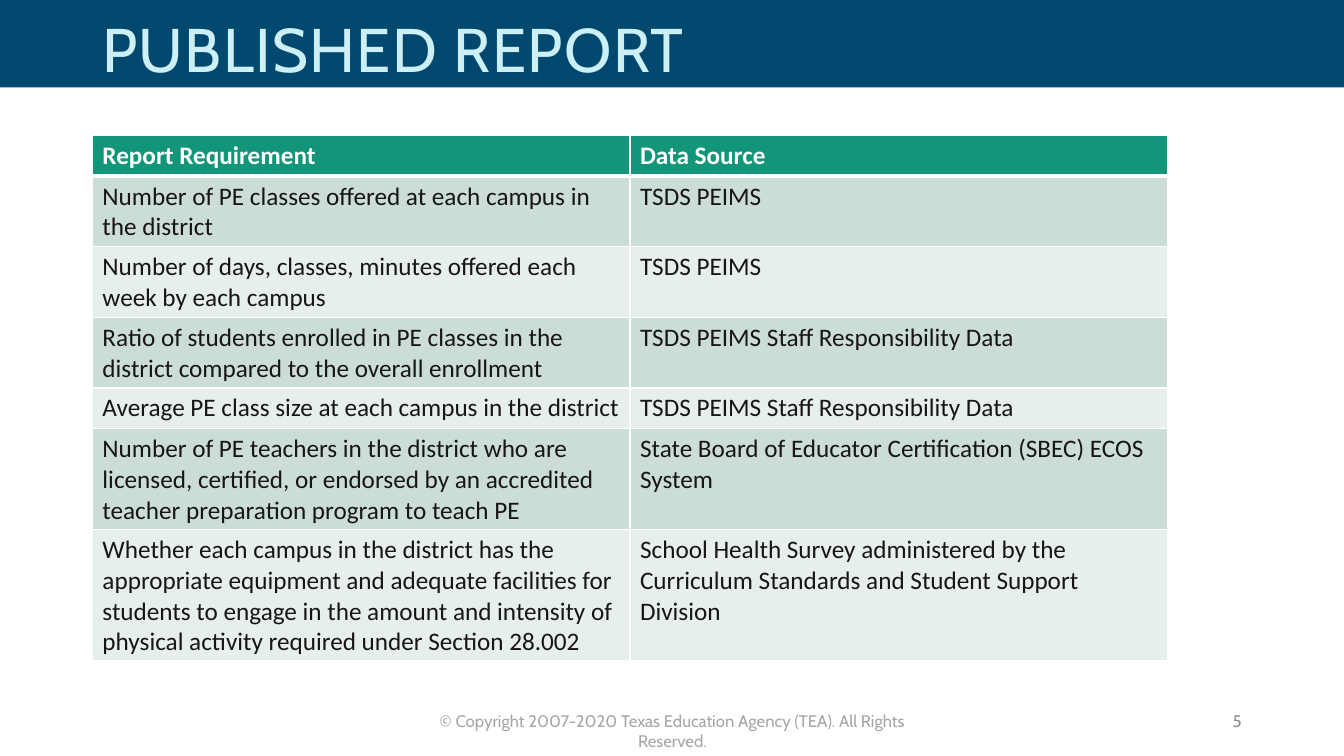
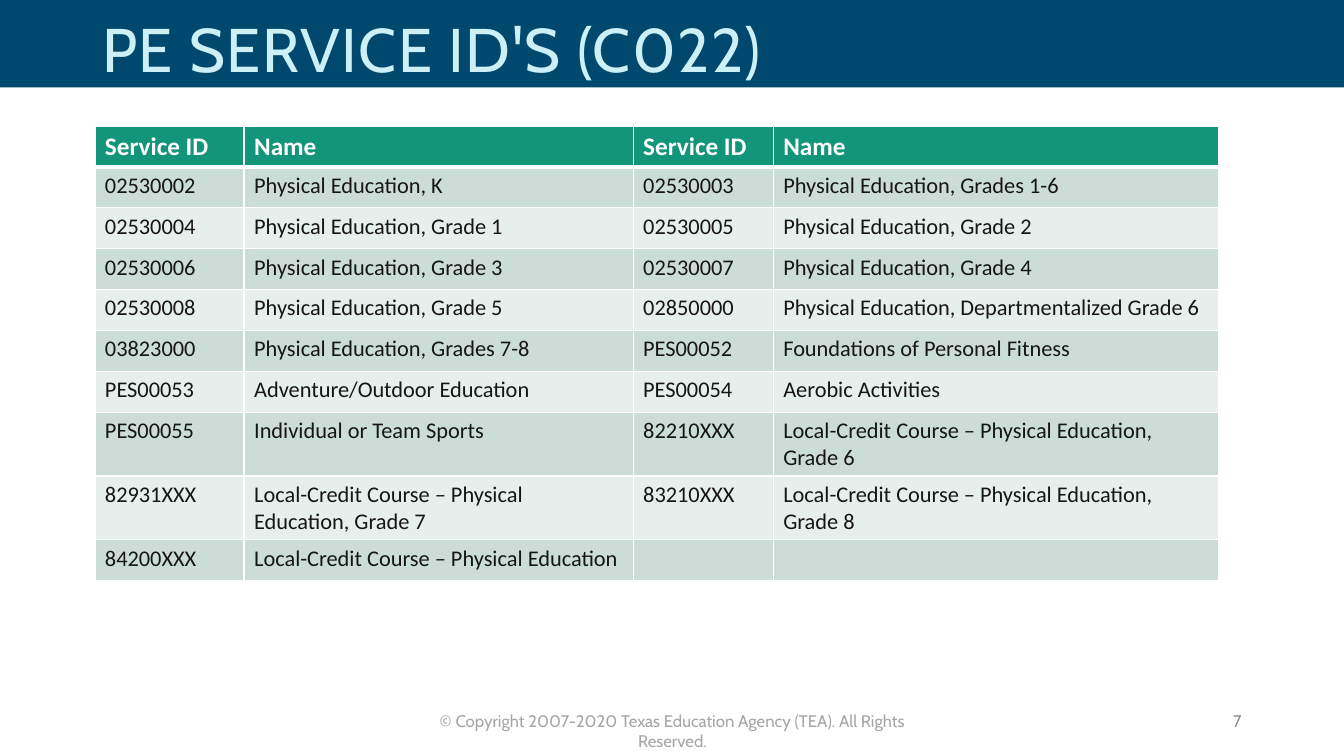
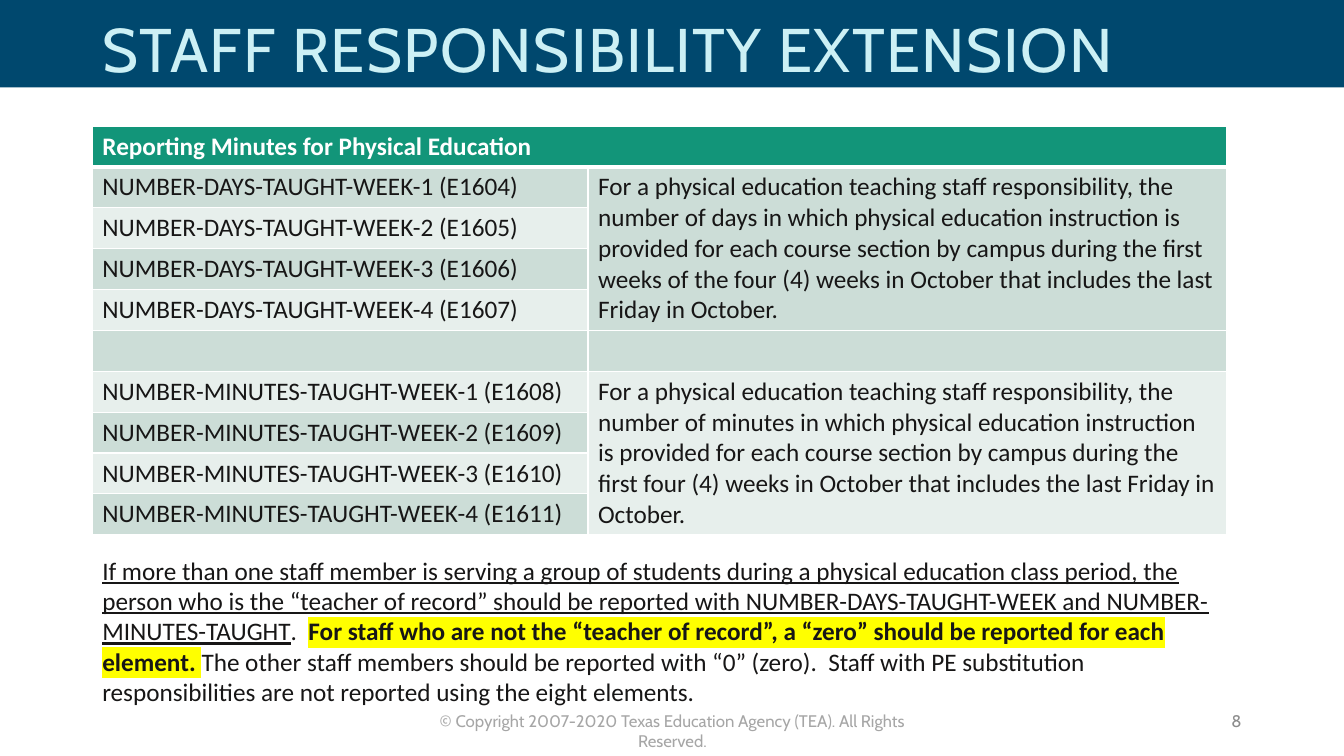
from lxml.etree import SubElement
from pptx import Presentation
from pptx.dml.color import RGBColor as Color
from pptx.enum.shapes import MSO_SHAPE as Shape
from pptx.enum.text import MSO_ANCHOR as Anchor, PP_ALIGN as Align
from pptx.oxml import parse_xml
from pptx.oxml.ns import nsdecls, qn
from pptx.util import Inches, Pt

COLORS = {
    "band": "00486E", "title": "CCF0F5", "header": "129579", "white": "FFFFFF",
    "dark stripe": "CCDDD7", "light stripe": "E7EFEC", "ink": "171616",
    "footer": "A6A6A6", "number": "8C8C8C", "marker": "FFFF00",
}
FORMATS = {
    "title": {"name": "Cabin", "size": Pt(44), "color": "title"},
    "footer": {"name": "Cabin", "size": Pt(12), "color": "footer"},
    "number": {"name": "Cabin", "size": Pt(12), "color": "number"},
    "header": {"name": "Calibri", "size": Pt(18), "color": "white", "bold": True},
    "body": {"name": "Calibri", "size": Pt(18), "color": "ink"},
    "small": {"name": "Calibri", "size": Pt(16), "color": "ink"},
}
# The slide is a grid of 160 columns by 90 rows
COLUMNS, ROWS = 160, 90
LEFT = 11
TABLE_ROW = 4.87
FOOTER = "© Copyright 2007-2020 Texas Education Agency (TEA). All Rights Reserved."


class Report:
    def __init__(self):
        self.deck = Presentation()
        self.deck.slide_width, self.deck.slide_height = Inches(13.33), Inches(7.5)
        self.page = None

    def x(self, columns):
        return int(self.deck.slide_width * columns / COLUMNS)

    def y(self, rows):
        return int(self.deck.slide_height * rows / ROWS)

    def place(self, left, top, width, height):
        return self.x(left), self.y(top), self.x(width), self.y(height)

    def start_page(self, title, number):
        """Add a slide with the shared band, title, footer and number."""
        self.page = self.deck.slides.add_slide(self.deck.slide_layouts[6])
        band = self.page.shapes.add_shape(Shape.RECTANGLE, *self.place(0, 0, COLUMNS, 10.4))
        band.shadow.inherit = False
        band.fill.solid()
        band.fill.fore_color.rgb = Color.from_string(COLORS["band"])
        band.line.fill.background()
        self.text((48.6, 84, 62.9, 3.6), [(FOOTER, {})], "footer", align=Align.CENTER)
        heading = self.text((LEFT, 1.1, 128, 10.4), [(title, {})], "title", anchor=Anchor.MIDDLE)
        heading.line_spacing = 0.9
        heading.runs[0].font._element.set("spc", "100")
        self.text((113, 83.4, 36, 4.8), [(str(number), {})], "number", Align.RIGHT, Anchor.MIDDLE)

    def add_spans(self, para, spans, style):
        """Add (text, extra format) spans to a paragraph."""
        for words, extra in spans:
            span = para.add_run()
            span.text = words
            values = {**FORMATS[style], **extra}
            span.font.color.rgb = Color.from_string(COLORS[values.pop("color")])
            marker = values.pop("marker", None)
            for key, value in values.items():
                setattr(span.font, key, value)
            if marker:
                fill = span.font._element.find(qn("a:solidFill"))
                fill.addnext(parse_xml(
                    f'<a:highlight {nsdecls("a")}><a:srgbClr val="{COLORS[marker]}"/></a:highlight>'))

    def text(self, area, spans, style, align=Align.LEFT, anchor=Anchor.TOP):
        frame = self.page.shapes.add_textbox(*self.place(*area)).text_frame
        frame.word_wrap = True
        frame.vertical_anchor = anchor
        para = frame.paragraphs[0]
        para.alignment = align
        self.add_spans(para, spans, style)
        return para

    def borders(self, cell, row):
        """White cell lines, heavier between the header and the body."""
        widths = {"L": 1, "R": 1, "T": 3 if row == 1 else 1, "B": 3 if row == 0 else 1}
        properties = cell._tc.get_or_add_tcPr()
        for index, (side, width) in enumerate(widths.items()):
            line = properties.makeelement(qn(f"a:ln{side}"), {"w": str(int(Pt(width)))})
            fill = SubElement(line, qn("a:solidFill"))
            SubElement(fill, qn("a:srgbClr"), val=COLORS["white"])
            properties.insert(index, line)

    def table(self, left, top, widths, rows, style="body", merges=()):
        area = self.place(left, top, sum(widths), TABLE_ROW * len(rows))
        table = self.page.shapes.add_table(len(rows), len(widths), *area).table
        for column, width in zip(table.columns, widths):
            column.width = self.x(width)
        for row, texts in enumerate(rows):
            table.rows[row].height = self.y(TABLE_ROW)
            stripe = "header" if row == 0 else ("light stripe", "dark stripe")[row % 2]
            for column, words in enumerate(texts):
                cell = table.cell(row, column)
                cell.fill.solid()
                cell.fill.fore_color.rgb = Color.from_string(COLORS[stripe])
                self.borders(cell, row)
                if words:
                    self.add_spans(cell.text_frame.paragraphs[0], [(words, {})],
                                   "header" if row == 0 else style)
        for first, last in merges:
            table.cell(*first).merge(table.cell(*last))


def main():
    report = Report()

    # Report requirements and their sources
    report.start_page("PUBLISHED REPORT", 5)
    report.table(LEFT, 16.1, [64, 64], [
        ("Report Requirement", "Data Source"),
        ("Number of PE classes offered at each campus in the district", "TSDS PEIMS"),
        ("Number of days, classes, minutes offered each week by each campus", "TSDS PEIMS"),
        ("Ratio of students enrolled in PE classes in the district compared to the overall "
         "enrollment", "TSDS PEIMS Staff Responsibility Data"),
        ("Average PE class size at each campus in the district",
         "TSDS PEIMS Staff Responsibility Data"),
        ("Number of PE teachers in the district who are licensed, certified, or endorsed by an "
         "accredited teacher preparation program to teach PE",
         "State Board of Educator Certification (SBEC) ECOS System"),
        ("Whether each campus in the district has the appropriate equipment and adequate "
         "facilities for students to engage in the amount and intensity of physical activity "
         "required under Section 28.002",
         "School Health Survey administered by the Curriculum Standards and Student Support "
         "Division"),
    ])

    # Service codes, two to a row
    course = "Physical Education"
    local = f"Local-Credit Course – {course}"
    report.start_page("PE SERVICE ID'S (C022)", 7)
    report.table(11.3, 15, [17.76, 46.32, 16.68, 53.04], [
        ("Service ID", "Name") * 2,
        ("02530002", f"{course}, K", "02530003", f"{course}, Grades 1-6"),
        ("02530004", f"{course}, Grade 1", "02530005", f"{course}, Grade 2"),
        ("02530006", f"{course}, Grade 3", "02530007", f"{course}, Grade 4"),
        ("02530008", f"{course}, Grade 5", "02850000", f"{course}, Departmentalized Grade 6"),
        ("03823000", f"{course}, Grades 7-8", "PES00052", "Foundations of Personal Fitness"),
        ("PES00053", "Adventure/Outdoor Education", "PES00054", "Aerobic Activities"),
        ("PES00055", "Individual or Team Sports", "82210XXX", f"{local}, Grade 6"),
        ("82931XXX", f"{local}, Grade 7", "83210XXX", f"{local}, Grade 8"),
        ("84200XXX", local, "", ""),
    ], style="small")

    # Weekly elements, each group with one merged explanation
    def weeks(unit, first_code, explanation):
        return [(f"NUMBER-{unit}-TAUGHT-WEEK-{week + 1} (E{first_code + week})",
                 "" if week else explanation) for week in range(4)]

    duty = "For a physical education teaching staff responsibility, the number of"
    given = "in which physical education instruction is provided for each course section by campus"
    october = "(4) weeks in October that includes the last Friday in October."
    report.start_page("STAFF RESPONSIBILITY EXTENSION", 8)
    report.table(LEFT, 15, [59, 76], [
        ("Reporting Minutes for Physical Education", ""),
        *weeks("DAYS", 1604, f"{duty} days {given} during the first weeks of the four {october}"),
        ("", ""),
        *weeks("MINUTES", 1608, f"{duty} minutes {given} during the first four {october}"),
    ], merges=[((0, 0), (0, 1)), ((1, 1), (4, 1)), ((6, 1), (9, 1))])
    report.text((LEFT, 65.5, 135, 19.4), [
        ("If more than one staff member is serving a group of students during a physical "
         "education class period, the person who is the “teacher of record” should be reported "
         "with NUMBER-DAYS-TAUGHT-WEEK and NUMBER-MINUTES-TAUGHT", {"underline": True}),
        (".  ", {}),
        ("For staff who are not the “teacher of record”, a “zero” should be reported for each "
         "element. ", {"bold": True, "marker": "marker"}),
        ("The other staff members should be reported with “0” (zero).  Staff with PE "
         "substitution responsibilities are not reported using the eight elements.", {}),
    ], "body")

    report.deck.save("out.pptx")


if __name__ == "__main__":
    main()
